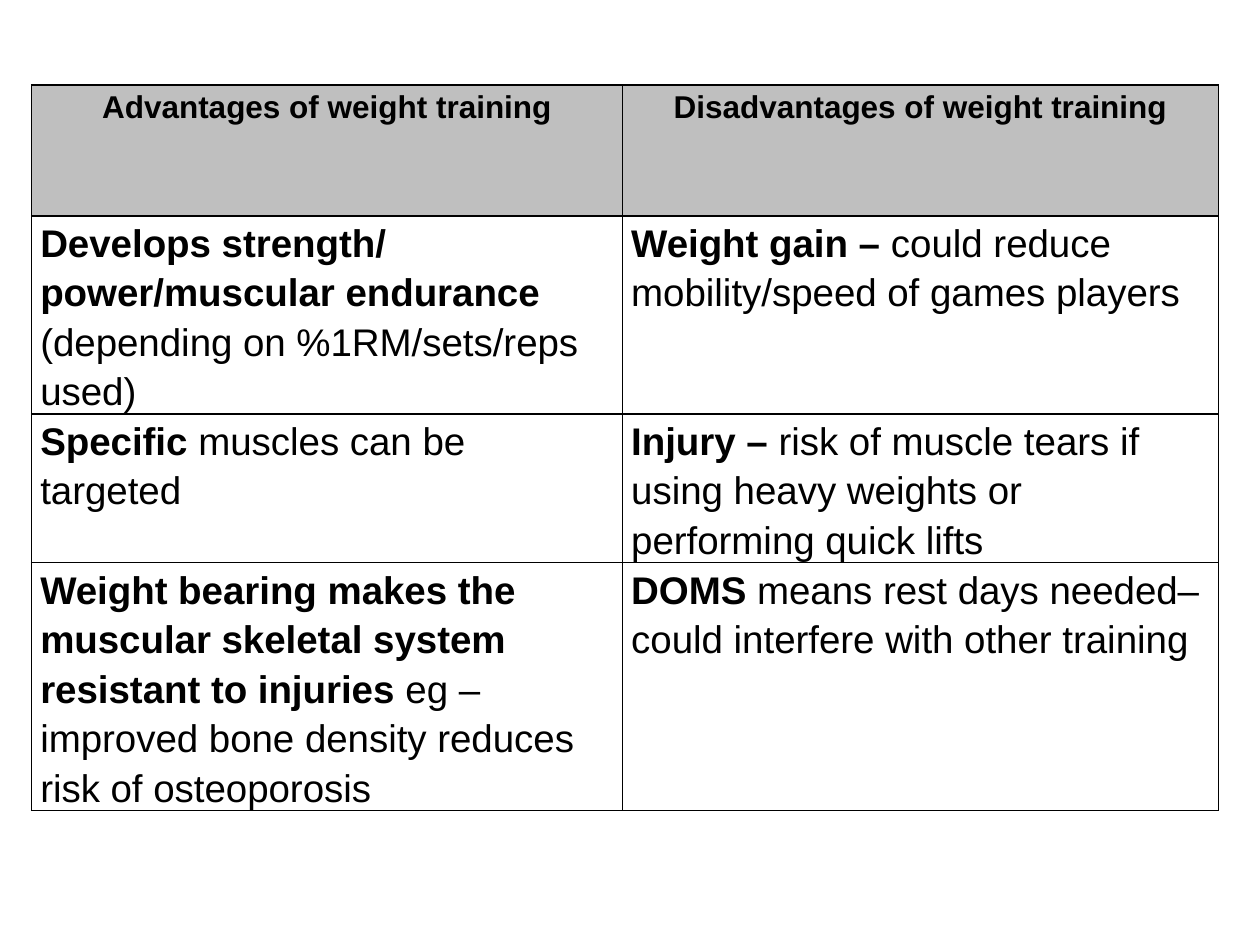
from lxml import etree
from pptx import Presentation
from pptx.dml.color import RGBColor
from pptx.enum.text import PP_ALIGN
from pptx.oxml.ns import qn
from pptx.util import Inches, Pt

LEFT, CENTER = PP_ALIGN.LEFT, PP_ALIGN.CENTER
BLACK = RGBColor(0x00, 0x00, 0x00)
GREY = RGBColor(0xBF, 0xBF, 0xBF)
BLANK_LAYOUT = 6

# Each cell is a bold lead followed by plain text
HEADERS = [("Advantages of weight training", ""),
           ("Disadvantages of weight training", "")]
BODY = [
    [("Develops strength/ power/muscular endurance ",
      "(depending on %1RM/sets/reps used)"),
     ("Weight gain – ", "could reduce mobility/speed of games players")],
    [("Specific ", "muscles can be targeted"),
     ("Injury – ", "risk of muscle tears if using heavy weights or "
                   "performing quick lifts")],
    [("Weight bearing makes the muscular skeletal system resistant to injuries ",
      "eg – improved bone density reduces risk of osteoporosis"),
     ("DOMS ", "means rest days needed– could interfere with other training")],
]
COLUMN_WIDTHS = [4.69, 4.73]
ROW_HEIGHTS = [1.04, 1.37, 0.64, 0.64]


class SlideBuilder:
    """Holds the text style and the current slide."""
    font = "Arial"
    header_size, body_size = Pt(18), Pt(22)
    line_spacing = 1.15
    border = Pt(1)
    margin = Inches(0.07)

    def __init__(self, prs):
        self.prs = prs
        self.slide = prs.slides.add_slide(prs.slide_layouts[BLANK_LAYOUT])

    def table(self, x, y, w, h, rows, widths, heights):
        """Add a table; x, y, w and h are shares of the slide's size."""
        sw, sh = self.prs.slide_width, self.prs.slide_height
        frame = self.slide.shapes.add_table(
            len(rows), len(widths),
            round(x * sw), round(y * sh), round(w * sw), round(h * sh))
        table = frame.table
        table.first_row = table.horz_banding = False
        for column, width in zip(table.columns, widths):
            column.width = Inches(width)
        for row, height in zip(table.rows, heights):
            row.height = Inches(height)
        frame.height = round(h * sh)
        for i, row in enumerate(rows):
            for j, parts in enumerate(row):
                self.cell(table.cell(i, j), parts, header=(i == 0))

    def cell(self, cell, parts, header):
        cell.margin_left = cell.margin_right = self.margin
        cell.margin_top = cell.margin_bottom = 0
        self.borders(cell)
        if header:
            cell.fill.solid()
            cell.fill.fore_color.rgb = GREY
        else:
            cell.fill.background()
        p = cell.text_frame.paragraphs[0]
        p.alignment = CENTER if header else LEFT
        p.line_spacing = self.line_spacing
        for text, bold in zip(parts, (True, False)):
            if text:
                r = p.add_run()
                r.text = text
                r.font.name = self.font
                r.font.size = self.header_size if header else self.body_size
                r.font.bold = bold
                r.font.color.rgb = BLACK

    def borders(self, cell):
        tc_pr = cell._tc.get_or_add_tcPr()
        for side in ("a:lnL", "a:lnR", "a:lnT", "a:lnB"):
            ln = etree.SubElement(tc_pr, qn(side), w=str(self.border))
            fill = etree.SubElement(ln, qn("a:solidFill"))
            etree.SubElement(fill, qn("a:srgbClr"), val=str(BLACK))


def main():
    prs = Presentation()
    prs.slide_width, prs.slide_height = Inches(10), Inches(7.5)

    # Comparison table
    s = SlideBuilder(prs)
    s.table(0.025, 0.09, 0.94, 0.8, [HEADERS, *BODY],
            COLUMN_WIDTHS, ROW_HEIGHTS)

    prs.save("out.pptx")


if __name__ == "__main__":
    main()
